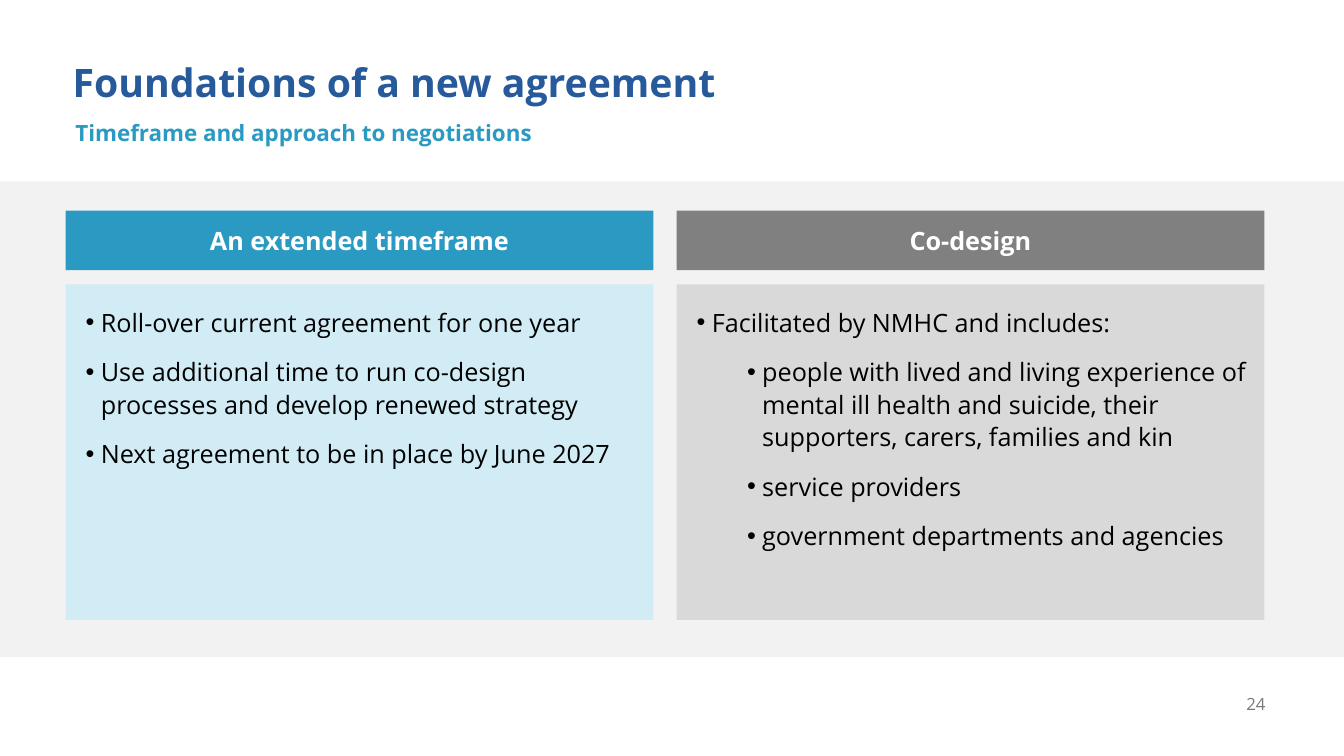
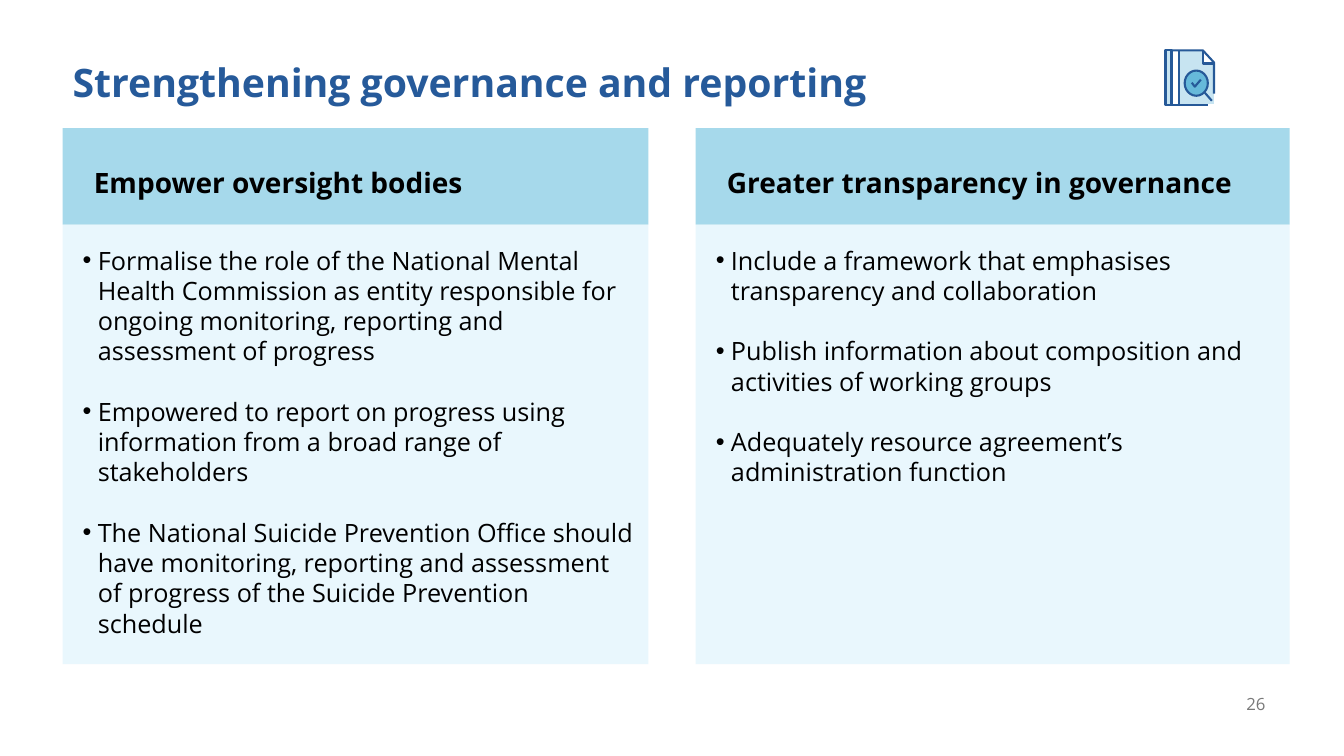
from dataclasses import dataclass

from lxml import etree
from pptx import Presentation
from pptx.dml.color import RGBColor
from pptx.enum.shapes import MSO_SHAPE
from pptx.enum.text import MSO_ANCHOR, MSO_AUTO_SIZE, PP_ALIGN
from pptx.oxml.ns import qn
from pptx.util import Inches, Pt

RECTANGLE, OVAL = MSO_SHAPE.RECTANGLE, MSO_SHAPE.OVAL
TOP, MIDDLE = MSO_ANCHOR.TOP, MSO_ANCHOR.MIDDLE
LEFT, CENTER, RIGHT = PP_ALIGN.LEFT, PP_ALIGN.CENTER, PP_ALIGN.RIGHT
NO_AUTOFIT = MSO_AUTO_SIZE.NONE

FONT = "Open Sans"
BLACK = RGBColor(0x00, 0x00, 0x00)
WHITE = RGBColor(0xFF, 0xFF, 0xFF)
NAVY = RGBColor(0x26, 0x5A, 0x9A)
TEAL = RGBColor(0x2B, 0x9A, 0xC2)
SKY = RGBColor(0xA6, 0xD9, 0xEB)
PALE_TEAL = RGBColor(0xD2, 0xEC, 0xF5)
PALE_SKY = RGBColor(0xE9, 0xF7, 0xFD)
DARK_GREY = RGBColor(0x80, 0x80, 0x80)
LIGHT_GREY = RGBColor(0xD9, 0xD9, 0xD9)
BAND_GREY = RGBColor(0xF2, 0xF2, 0xF2)
NUMBER_GREY = RGBColor(0x79, 0x79, 0x79)
ICON_LINE = RGBColor(0x26, 0x59, 0x98)
ICON_PAPER = RGBColor(0xC7, 0xE4, 0xF1)
ICON_LENS = RGBColor(0x66, 0xB9, 0xDA)

SLIDE_WIDTH, SLIDE_HEIGHT = 13.33, 7.5
COMPARISON_LAYOUT = 4
DEFAULT_INSETS = (0.1, 0.05, 0.1, 0.05)
LIST_INSETS = (0.2, 0.2, 0.1, 0.05)
BULLET_HANG = 0.15
LEVEL_STEP = 0.5


@dataclass(frozen=True)
class TextStyle:
    size: float
    color: RGBColor = BLACK
    bold: bool = False
    align: PP_ALIGN = LEFT
    line_spacing: float = 1.0
    space_after: float = 0


@dataclass(frozen=True)
class Bullet:
    text: str
    level: int = 0


@dataclass(frozen=True)
class Column:
    left: float
    width: float
    header: str
    header_fill: RGBColor
    body_fill: RGBColor
    bullets: tuple[Bullet, ...]


@dataclass(frozen=True)
class ColumnStyle:
    header_top: float
    header_height: float
    body_top: float
    body_height: float
    header_insets: tuple[float, ...]
    header_text: TextStyle
    body_text: TextStyle


@dataclass(frozen=True)
class IconOutline:
    points: tuple[tuple[float, float], ...]
    fill: RGBColor | None = None
    stroke: bool = True


TITLE = TextStyle(28, NAVY, bold=True, line_spacing=0.9)
SUBTITLE = TextStyle(16, TEAL, bold=True, line_spacing=0.9)
PAGE_NUMBER = TextStyle(12, NUMBER_GREY, align=RIGHT)

FOUNDATION_STYLE = ColumnStyle(
    2.09, 0.59, 2.82, 3.33, DEFAULT_INSETS,
    TextStyle(18, WHITE, bold=True, align=CENTER),
    TextStyle(18, line_spacing=1.08, space_after=12),
)
FOUNDATION_COLUMNS = (
    Column(0.65, 5.83, "An extended timeframe", TEAL, PALE_TEAL, (
        Bullet("Roll-over current agreement for one year"),
        Bullet("Use additional time to run co-design processes and develop renewed strategy"),
        Bullet("Next agreement to be in place by June 2027"),
    )),
    Column(6.71, 5.83, "Co-design", DARK_GREY, LIGHT_GREY, (
        Bullet("Facilitated by NMHC and includes:"),
        Bullet("people with lived and living experience of mental ill health and suicide, "
               "their supporters, carers, families and kin", 1),
        Bullet("service providers", 1),
        Bullet("government departments and agencies", 1),
    )),
)

GOVERNANCE_STYLE = ColumnStyle(
    1.27, 0.96, 2.23, 4.36, (0.31, 0.16, 0.1, 0.05),
    TextStyle(20, bold=True),
    TextStyle(18, space_after=21.6),
)
GOVERNANCE_COLUMNS = (
    Column(0.62, 5.81, "Empower oversight bodies", SKY, PALE_SKY, (
        Bullet("Formalise the role of the National Mental Health Commission as entity "
               "responsible for ongoing monitoring, reporting and assessment of progress"),
        Bullet("Empowered to report on progress using information from a broad range "
               "of stakeholders"),
        Bullet("The National Suicide Prevention Office should have monitoring, reporting "
               "and assessment of progress of the Suicide Prevention schedule"),
    )),
    Column(6.9, 5.89, "Greater transparency in governance", SKY, PALE_SKY, (
        Bullet("Include a framework that emphasises transparency and collaboration"),
        Bullet("Publish information about composition and activities of working groups"),
        Bullet("Adequately resource agreement’s administration function"),
    )),
)

# Report icon: spine, page, folded corner and cover edge
REPORT_OUTLINES = (
    IconOutline(((11.56, 0.5), (11.62, 0.5), (11.62, 1.04), (11.56, 1.04), (11.56, 0.5)),
                ICON_PAPER),
    IconOutline(((11.69, 0.5), (11.93, 0.5), (11.93, 0.62), (12.04, 0.62), (12.04, 1.03),
                 (11.69, 1.03), (11.69, 0.5)), ICON_PAPER, stroke=False),
    IconOutline(((11.69, 0.5), (11.69, 1.04))),
    IconOutline(((11.93, 0.5), (11.93, 0.63), (12.04, 0.63))),
    IconOutline(((11.62, 0.5), (11.93, 0.5), (12.04, 0.62), (12.04, 0.93))),
    IconOutline(((11.62, 1.04), (11.98, 1.04))),
)
# Handle and tick of the magnifying glass
GLASS_OUTLINES = (
    IconOutline(((11.95, 0.92), (12.02, 1.0))),
    IconOutline(((11.82, 0.82), (11.85, 0.86), (11.91, 0.79))),
)


def place(shape, left: float, top: float, width: float, height: float) -> None:
    shape.left, shape.top = Inches(left), Inches(top)
    shape.width, shape.height = Inches(width), Inches(height)


def set_frame(shape, anchor: MSO_ANCHOR, insets: tuple[float, ...] = DEFAULT_INSETS) -> None:
    frame = shape.text_frame
    frame.word_wrap = True
    frame.auto_size = NO_AUTOFIT
    frame.vertical_anchor = anchor
    (frame.margin_left, frame.margin_top,
     frame.margin_right, frame.margin_bottom) = map(Inches, insets)


def write(paragraph, text: str, style: TextStyle) -> None:
    paragraph.alignment = style.align
    paragraph.line_spacing = style.line_spacing
    paragraph.space_before = Pt(0)
    paragraph.space_after = Pt(style.space_after)
    run = paragraph.add_run()
    run.text = text
    run.font.name = FONT
    run.font.size = Pt(style.size)
    run.font.bold = style.bold
    run.font.color.rgb = style.color


def add_bullet(paragraph, level: int) -> None:
    paragraph.level = level
    properties = paragraph._p.get_or_add_pPr()
    properties.set("marL", str(Inches(BULLET_HANG + level * LEVEL_STEP)))
    properties.set("indent", str(-Inches(BULLET_HANG)))
    etree.SubElement(properties, qn("a:buFont")).set("typeface", "Arial")
    etree.SubElement(properties, qn("a:buChar")).set("char", "•")


def fill_with(shape, color: RGBColor) -> None:
    shape.fill.solid()
    shape.fill.fore_color.rgb = color


def add_text(slide, left: float, top: float, width: float, height: float,
             text: str, style: TextStyle, anchor: MSO_ANCHOR) -> None:
    box = slide.shapes.add_textbox(Inches(left), Inches(top), Inches(width), Inches(height))
    set_frame(box, anchor)
    write(box.text_frame.paragraphs[0], text, style)


def draw_column(header, body, column: Column, style: ColumnStyle) -> None:
    place(header, column.left, style.header_top, column.width, style.header_height)
    fill_with(header, column.header_fill)
    set_frame(header, MIDDLE, style.header_insets)
    write(header.text_frame.paragraphs[0], column.header, style.header_text)

    place(body, column.left, style.body_top, column.width, style.body_height)
    fill_with(body, column.body_fill)
    set_frame(body, TOP, LIST_INSETS)
    frame = body.text_frame
    for index, bullet in enumerate(column.bullets):
        paragraph = frame.add_paragraph() if index else frame.paragraphs[0]
        add_bullet(paragraph, bullet.level)
        write(paragraph, bullet.text, style.body_text)


def add_column_slide(presentation, title: str, number: int,
                     columns: tuple[Column, ...], style: ColumnStyle):
    slide = presentation.slides.add_slide(presentation.slide_layouts[COMPARISON_LAYOUT])
    heading = slide.shapes.title
    place(heading, 0.62, 0.56, 12.12, 0.56)
    set_frame(heading, MIDDLE)
    write(heading.text_frame.paragraphs[0], title, TITLE)
    # Placeholders 1 and 2 form the left column, 3 and 4 the right one
    for index, column in enumerate(columns):
        header, body = (slide.placeholders[2 * index + part] for part in (1, 2))
        draw_column(header, body, column, style)
    add_text(slide, 11.89, 6.78, 0.76, 0.4, str(number), PAGE_NUMBER, MIDDLE)
    return slide


def add_band(slide) -> None:
    band = slide.shapes.add_shape(
        RECTANGLE, 0, Inches(1.8), Inches(SLIDE_WIDTH), Inches(4.72))
    band.shadow.inherit = False
    fill_with(band, BAND_GREY)
    band.line.fill.background()
    slide.shapes._spTree.insert(2, band._element)  # behind the columns


def style_icon_part(shape, fill: RGBColor | None, stroke: bool) -> None:
    shape.shadow.inherit = False
    if fill is None:
        shape.fill.background()
    else:
        fill_with(shape, fill)
    if stroke:
        shape.line.color.rgb = ICON_LINE
        shape.line.width = Pt(1.5)
    else:
        shape.line.fill.background()


def draw_outlines(icon, outlines: tuple[IconOutline, ...]) -> None:
    for outline in outlines:
        start, *others = [(Inches(x), Inches(y)) for x, y in outline.points]
        builder = icon.shapes.build_freeform(*start)
        builder.add_line_segments(others, close=outline.fill is not None)
        style_icon_part(builder.convert_to_shape(), outline.fill, outline.stroke)


def add_report_icon(slide) -> None:
    icon = slide.shapes.add_group_shape()
    draw_outlines(icon, REPORT_OUTLINES)
    lens = icon.shapes.add_shape(
        OVAL, Inches(11.75), Inches(0.7), Inches(0.23), Inches(0.25))
    style_icon_part(lens, ICON_LENS, stroke=True)
    draw_outlines(icon, GLASS_OUTLINES)


def main() -> None:
    presentation = Presentation()
    presentation.slide_width = Inches(SLIDE_WIDTH)
    presentation.slide_height = Inches(SLIDE_HEIGHT)

    # Timeframe and co-design
    foundations = add_column_slide(presentation, "Foundations of a new agreement", 24,
                                   FOUNDATION_COLUMNS, FOUNDATION_STYLE)
    add_band(foundations)
    add_text(foundations, 0.65, 1.16, 12.12, 0.44,
             "Timeframe and approach to negotiations", SUBTITLE, TOP)

    # Oversight and transparency
    governance = add_column_slide(presentation, "Strengthening governance and reporting", 26,
                                  GOVERNANCE_COLUMNS, GOVERNANCE_STYLE)
    add_report_icon(governance)

    presentation.save("out.pptx")


if __name__ == "__main__":
    main()
